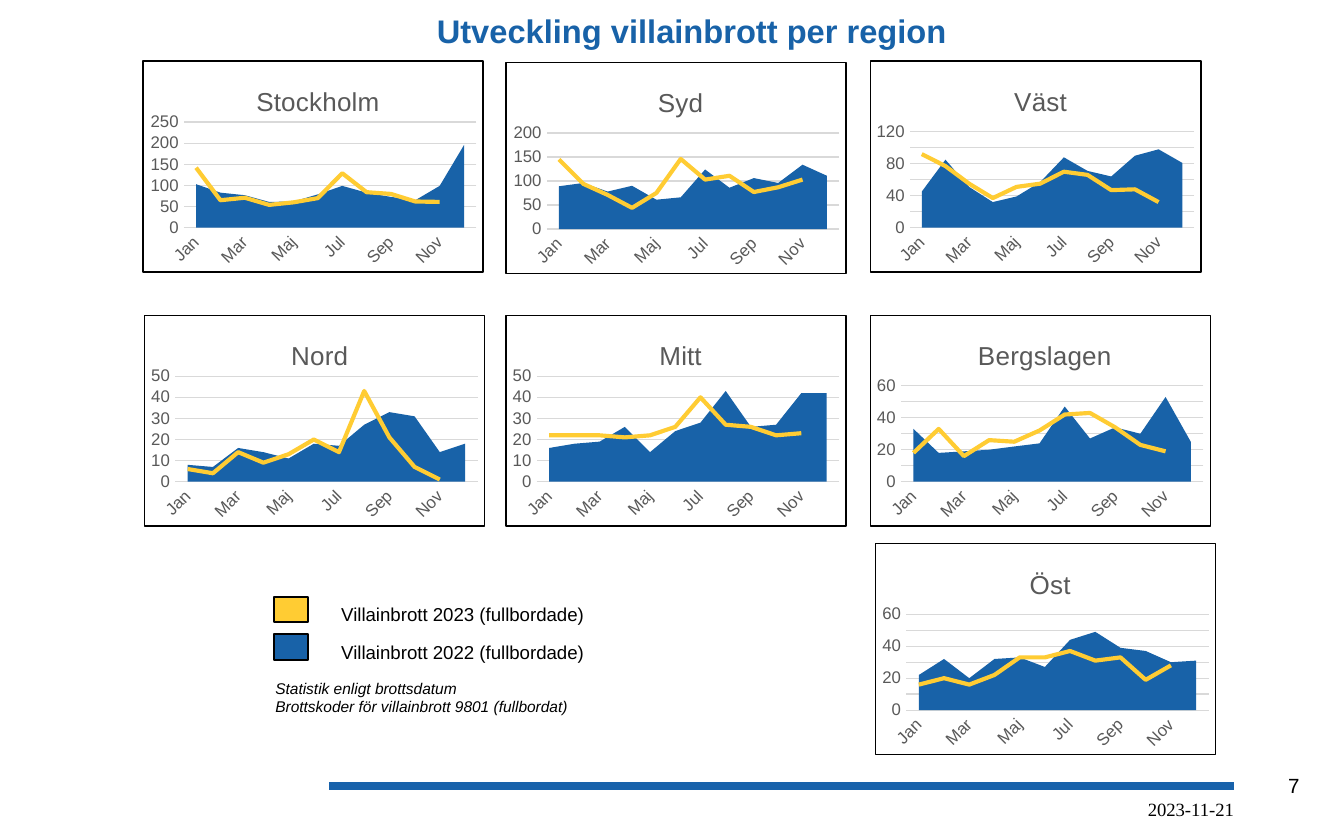
from dataclasses import dataclass

from lxml import etree
from pptx import Presentation
from pptx.chart.data import CategoryChartData
from pptx.dml.color import RGBColor
from pptx.enum.chart import XL_CHART_TYPE as ChartType
from pptx.enum.chart import XL_MARKER_STYLE as MarkerStyle
from pptx.enum.chart import XL_TICK_MARK as TickMark
from pptx.enum.shapes import MSO_CONNECTOR as Connector
from pptx.enum.shapes import MSO_SHAPE as ShapeType
from pptx.enum.text import PP_ALIGN as Align
from pptx.oxml import parse_xml
from pptx.oxml.ns import nsdecls, qn
from pptx.util import Inches, Pt


@dataclass(frozen=True)
class Theme:
    font: str = "Arial"
    date_font: str = "Times New Roman"
    blue: str = "1862A8"
    bar_blue: str = "1862AB"
    yellow: str = "FFCC33"
    black: str = "000000"
    white: str = "FFFFFF"
    gray: str = "595959"
    grid: str = "D9D9D9"
    title_size: float = 17.5
    chart_title_size: float = 14
    page_size: float = 11
    text_size: float = 10
    axis_size: float = 9
    note_size: float = 8.3


THEME = Theme()
MONTHS = ["Jan", "Feb", "Mar", "Apr", "Maj", "Jun",
          "Jul", "Aug", "Sep", "Okt", "Nov", "Dec"]
CHART_WIDTH, CHART_HEIGHT = 2.54, 1.58

# Region, left, top, width, title width, axis maximum, axis step, 2022, 2023
REGIONS = [
    ("Bergslagen", 6.47, 2.34, CHART_WIDTH, 1.0, 60, 10,
     [33, 18, 19, 20, 22, 24, 47, 27, 34, 30, 53, 25],
     [18, 33, 16, 26, 25, 32, 42, 43, 34, 23, 19, None]),
    ("Mitt", 3.76, 2.34, CHART_WIDTH, 0.32, 50, 10,
     [16, 18, 19, 26, 14, 24, 28, 43, 26, 27, 42, 42],
     [22, 22, 22, 21, 22, 26, 40, 27, 26, 22, 23, None]),
    ("Nord", 1.07, 2.34, CHART_WIDTH, 0.42, 50, 10,
     [8, 7, 16, 14, 11, 18, 17, 27, 33, 31, 14, 18],
     [6, 4, 14, 9, 13, 20, 14, 43, 21, 7, 1, None]),
    ("Stockholm", 1.06, 0.45, CHART_WIDTH, 0.92, 250, 50,
     [103, 83, 77, 61, 62, 79, 99, 83, 73, 65, 99, 196],
     [142, 65, 71, 54, 60, 70, 129, 84, 80, 62, 61, None]),
    ("Syd", 3.76, 0.46, CHART_WIDTH, 0.34, 200, 50,
     [89, 96, 78, 90, 61, 66, 124, 86, 106, 96, 134, 111],
     [145, 94, 71, 44, 75, 146, 103, 111, 77, 87, 103, None]),
    ("Väst", 6.47, 0.45, 2.47, 0.39, 120, 20,
     [45, 85, 51, 32, 39, 57, 88, 71, 64, 90, 98, 81],
     [92, 77, 55, 37, 51, 55, 70, 66, 47, 48, 32, None]),
    ("Öst", 6.51, 4.04, CHART_WIDTH, 0.31, 60, 10,
     [22, 32, 20, 32, 33, 27, 44, 49, 39, 37, 30, 31],
     [16, 20, 16, 22, 33, 33, 37, 31, 33, 19, 28, None]),
]


def rgb(color):
    return RGBColor.from_string(color)


def apply_font(font, color, **values):
    for name, value in values.items():
        setattr(font, name, value)
    font.color.rgb = rgb(color)


def apply_line(line, color, width):
    line.color.rgb = rgb(color)
    line.width = Pt(width)


def add_text(slide, box, lines, size, color=THEME.black, align=Align.LEFT,
             wrap=True, font=THEME.font, bold=False, italic=False, insets=None):
    shape = slide.shapes.add_textbox(*map(Inches, box))
    frame = shape.text_frame
    frame.word_wrap = wrap
    for name, value in (insets or {}).items():
        setattr(frame, "margin_" + name, Inches(value))
    for index, line in enumerate(lines):
        paragraph = frame.paragraphs[0] if index == 0 else frame.add_paragraph()
        paragraph.alignment = align
        run = paragraph.add_run()
        run.text = line
        apply_font(run.font, color, name=font, size=Pt(size), bold=bold, italic=italic)


def set_layout(parent, index, **values):
    """Give a chart part a manual layout in fractions of the chart."""
    old = parent.find(qn("c:layout"))
    if old is not None:
        parent.remove(old)
    layout = etree.Element(qn("c:layout"))
    manual = etree.SubElement(layout, qn("c:manualLayout"))
    for name, value in values.items():
        etree.SubElement(manual, qn("c:" + name)).set("val", str(value))
    parent.insert(index, layout)


def move_to_line_plot(chart):
    """Draw the second area series as a line on the same axes."""
    area = chart._chartSpace.find(".//" + qn("c:areaChart"))
    line = parse_xml(f'<c:lineChart {nsdecls("c")}><c:grouping val="standard"/>'
                     '<c:varyColors val="0"/></c:lineChart>')
    line.append(area.findall(qn("c:ser"))[1])
    etree.SubElement(line, qn("c:marker")).set("val", "1")
    for axis in area.findall(qn("c:axId")):
        etree.SubElement(line, qn("c:axId")).set("val", axis.get("val"))
    area.addnext(line)


def format_axes(chart, maximum, step):
    category, value = chart.category_axis, chart.value_axis
    for axis in (category, value):
        axis.major_tick_mark = axis.minor_tick_mark = TickMark.NONE
        apply_font(axis.tick_labels.font, THEME.gray, name=THEME.font,
                   size=Pt(THEME.axis_size), bold=False)
    category.has_major_gridlines = False
    apply_line(category.format.line, THEME.grid, 0.75)
    category._element.find(qn("c:txPr")).find(qn("a:bodyPr")).set("rot", "-2700000")
    settings = {"minimum_scale": 0, "maximum_scale": maximum,
                "major_unit": step, "has_major_gridlines": True}
    for name, setting in settings.items():
        setattr(value, name, setting)
    apply_line(value.major_gridlines.format.line, THEME.grid, 0.75)
    value.format.line.fill.background()
    value._element.find(qn("c:crossBetween")).set("val", "between")


def add_region_chart(slide, name, left, top, width, title_width,
                     maximum, step, burglaries_2022, burglaries_2023):
    data = CategoryChartData()
    data.categories = MONTHS
    data.add_series("Series 1", burglaries_2022)
    data.add_series("Series 2", burglaries_2023)
    box = map(Inches, (left, top, width, CHART_HEIGHT))
    chart = slide.shapes.add_chart(ChartType.AREA, *box, data).chart
    chart.has_legend = False
    apply_font(chart.font, THEME.black, name=THEME.font, size=Pt(THEME.text_size))
    space = chart._chartSpace

    # Area for 2022, line for 2023
    move_to_line_plot(chart)
    for plot in chart.plots:
        plot.vary_by_categories = False
    area, line = (plot.series[0] for plot in chart.plots)
    area.format.fill.solid()
    area.format.fill.fore_color.rgb = rgb(THEME.blue)
    apply_line(line.format.line, THEME.yellow, 2.25)
    line.marker.style = MarkerStyle.NONE
    line.smooth = False
    for blanks in space.iter(qn("c:dispBlanksAs")):
        blanks.set("val", "gap")
    format_axes(chart, maximum, step)

    # Title
    chart.has_title = True
    title = chart.chart_title
    run = title.text_frame.paragraphs[0].add_run()
    run.text = name
    apply_font(run.font, THEME.gray, name=THEME.font,
               size=Pt(THEME.chart_title_size), bold=False)
    set_layout(title._element, 1, xMode="edge", yMode="edge",
               x=round(0.5 - title_width / width / 2, 3), y=0.09)

    # Plot area: room for the digits, and for a label on the top gridline
    plot_left = 0.12 if maximum >= 100 else 0.09
    plot_top = 0.29 if maximum // step % 2 else 0.335
    set_layout(space.find(".//" + qn("c:plotArea")), 0, layoutTarget="inner",
               xMode="edge", yMode="edge", x=plot_left, y=plot_top,
               w=round(0.98 - plot_left, 3), h=round(0.79 - plot_top, 3))

    # Frame
    space.find(qn("c:txPr")).addprevious(parse_xml(
        f'<c:spPr {nsdecls("c", "a")}>'
        f'<a:solidFill><a:srgbClr val="{THEME.white}"/></a:solidFill>'
        f'<a:ln w="{Pt(0.75)}"><a:solidFill><a:srgbClr val="{THEME.black}"/>'
        '</a:solidFill></a:ln></c:spPr>'))


def add_legend_entry(slide, top, color, label):
    swatch = slide.shapes.add_shape(
        ShapeType.RECTANGLE, *map(Inches, (2.04, top, 0.25, 0.19)))
    swatch.shadow.inherit = False
    swatch.fill.solid()
    swatch.fill.fore_color.rgb = rgb(color)
    apply_line(swatch.line, THEME.black, 1)
    add_text(slide, (2.44, top, 2.02, 0.27), [label], THEME.text_size, wrap=False)


def add_footer(slide):
    bar = slide.shapes.add_connector(
        Connector.STRAIGHT, *map(Inches, (2.45, 5.85, 9.18, 5.85)))
    apply_line(bar.line, THEME.bar_blue, 4.5)
    etree.SubElement(bar._element.spPr, qn("a:effectLst"))
    add_text(slide, (9.27, 5.71, 0.49, 0.27), ["7"], THEME.page_size, align=Align.RIGHT,
             insets={"left": 0.09, "top": 0.04, "right": 0.09, "bottom": 0.04})
    add_text(slide, (3.12, 5.89, 6.15, 0.26), ["2023-11-21"], THEME.text_size,
             align=Align.RIGHT, font=THEME.date_font, insets={"left": 0, "right": 0.09})


def main():
    presentation = Presentation()
    presentation.slide_width, presentation.slide_height = Inches(10), Inches(6.25)
    slide = presentation.slides.add_slide(presentation.slide_layouts[6])
    add_footer(slide)
    for region in REGIONS:
        add_region_chart(slide, *region)
    add_text(slide, (1.87, 0.03, 6.56, 0.4), ["Utveckling villainbrott per region"],
             THEME.title_size, THEME.blue, Align.CENTER, bold=True)
    add_legend_entry(slide, 4.44, THEME.yellow, "Villainbrott 2023 (fullbordade)")
    add_legend_entry(slide, 4.72, THEME.blue, "Villainbrott 2022 (fullbordade)")
    add_text(slide, (1.95, 5, 2.41, 0.38),
             ["Statistik enligt brottsdatum", "Brottskoder för villainbrott 9801 (fullbordat)"],
             THEME.note_size, wrap=False, italic=True)
    presentation.save("out.pptx")


if __name__ == "__main__":
    main()
